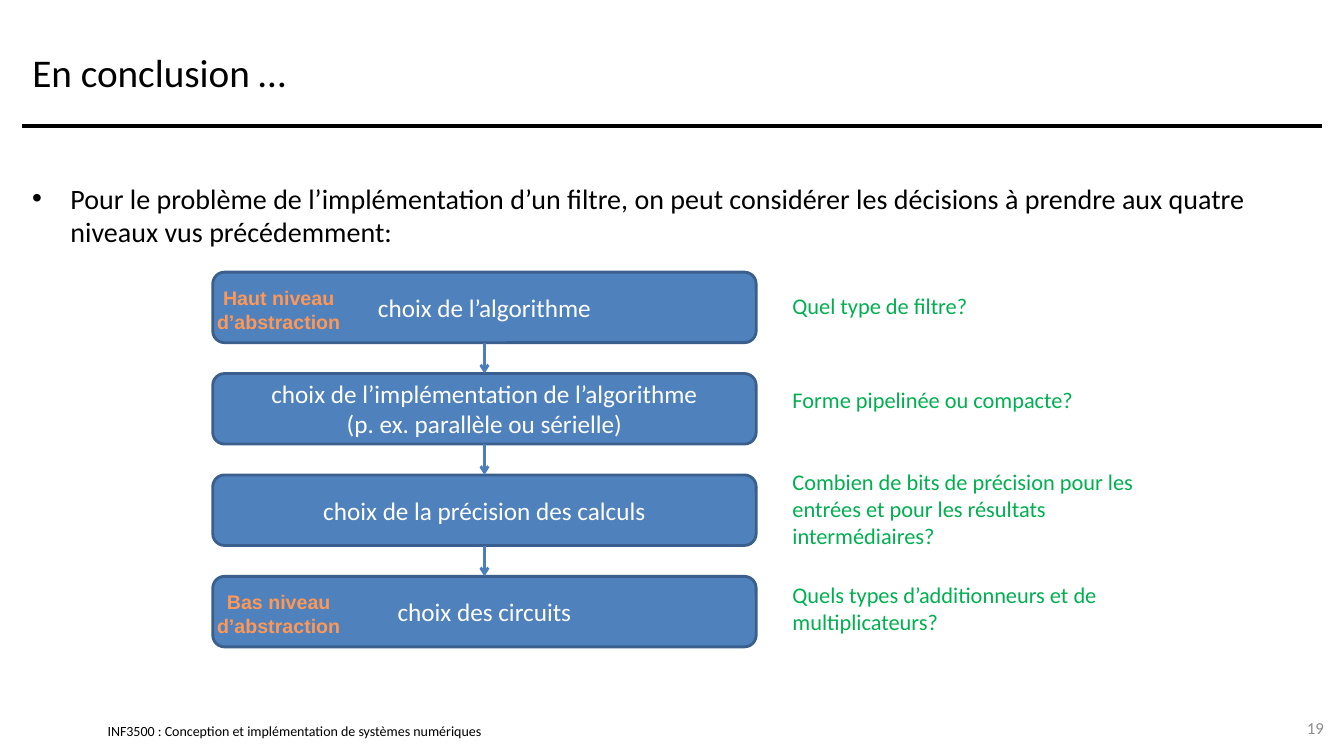
from lxml import etree
from pptx import Presentation
from pptx.dml.color import RGBColor
from pptx.enum.shapes import MSO_CONNECTOR, MSO_SHAPE
from pptx.enum.text import MSO_ANCHOR, MSO_AUTO_SIZE, PP_ALIGN
from pptx.oxml.ns import qn
from pptx.util import Inches, Pt

STRAIGHT = MSO_CONNECTOR.STRAIGHT
ROUNDED = MSO_SHAPE.ROUNDED_RECTANGLE
TOP, MIDDLE = MSO_ANCHOR.TOP, MSO_ANCHOR.MIDDLE
LEFT, CENTER, RIGHT = PP_ALIGN.LEFT, PP_ALIGN.CENTER, PP_ALIGN.RIGHT
BOTTOM_SIDE, TOP_SIDE = 2, 0

COLORS = {
    "text": "000000",
    "box": "4F81BD",
    "edge": "3A5F8C",
    "arrow": "4B7EBC",
    "box_text": "FFFFFF",
    "question": "00B050",
    "level": "FF9856",
    "number": "8C8C8C",
}
SLIDE_W, SLIDE_H = 13.33, 7.5
MARGIN, CONTENT_W = 0.22, 12.89
BOX_H, STEP = 0.7, 1.006
QUESTION_H = 0.81

LEVELS = [
    (["choix de l’algorithme"], "Quel type de filtre?", -0.02, "Haut niveau d’abstraction"),
    (["choix de l’implémentation de l’algorithme", "(p. ex. parallèle ou sérielle)"],
     "Forme pipelinée ou compacte?", -0.09, None),
    (["choix de la précision des calculs"],
     "Combien de bits de précision pour les entrées et pour les résultats intermédiaires?",
     -0.02, None),
    (["choix des circuits"], "Quels types d’additionneurs et de multiplicateurs?",
     -0.04, "Bas niveau d’abstraction"),
]


def rgb(name):
    return RGBColor.from_string(COLORS[name])


def write(sp, lines, size, color, align=LEFT, anchor=MIDDLE, font="Calibri", bold=False, inset=None):
    tf = sp.text_frame
    tf.word_wrap = True
    tf.auto_size = MSO_AUTO_SIZE.NONE
    tf.vertical_anchor = anchor
    if inset is not None:
        tf.margin_left = tf.margin_right = tf.margin_top = tf.margin_bottom = Inches(inset)
    p = tf.paragraphs[0]
    p.alignment = align
    for i, line in enumerate(lines):
        if i:
            p.add_line_break()
        r = p.add_run()
        r.text = line
        r.font.size, r.font.name, r.font.bold = Pt(size), font, bold
        r.font.color.rgb = rgb(color)
    return p


def add_text(s, box, *args, **style):
    sp = s.shapes.add_textbox(*map(Inches, box))
    return write(sp, *args, **style)


def add_line(s, start, end, color, width):
    line = s.shapes.add_connector(STRAIGHT, *map(Inches, start + end))
    line.line.color.rgb = rgb(color)
    line.line.width = Pt(width)
    etree.SubElement(line._element.spPr, qn("a:effectLst"))
    return line


def add_header(s, box):
    left, top, width, height = box
    title = s.shapes.title
    title.left, title.top, title.width, title.height = map(Inches, box)
    write(title, ["En conclusion …"], 28, "text")
    bottom = top + height
    add_line(s, (left, bottom), (left + width, bottom), "text", 3)


def add_bullet(s, box):
    text = ("Pour le problème de l’implémentation d’un filtre, on peut considérer "
            "les décisions à prendre aux quatre niveaux vus précédemment:")
    p = add_text(s, box, [text], 20, "text", anchor=TOP)
    pPr = p._p.get_or_add_pPr()
    pPr.set("marL", str(Inches(0.38)))
    pPr.set("indent", str(-Inches(0.38)))
    etree.SubElement(pPr, qn("a:buFont"), typeface="Arial")
    etree.SubElement(pPr, qn("a:buChar"), char="•")


def add_level_box(s, box, lines):
    sp = s.shapes.add_shape(ROUNDED, *map(Inches, box))
    sp.shadow.inherit = False
    sp.fill.solid()
    sp.fill.fore_color.rgb = rgb("box")
    sp.line.color.rgb = rgb("edge")
    sp.line.width = Pt(2)
    write(sp, lines, 18, "box_text", align=CENTER)
    return sp


def join(s, upper, lower):
    arrow = add_line(s, (0, 0), (0, 0), "arrow", 2)
    arrow.begin_connect(upper, BOTTOM_SIDE)
    arrow.end_connect(lower, TOP_SIDE)
    etree.SubElement(arrow.line._get_or_add_ln(), qn("a:tailEnd"), type="arrow")


def add_levels(s, left, top, width):
    previous = None
    for row, (lines, question, shift, level) in enumerate(LEVELS):
        y = top + row * STEP
        box = add_level_box(s, (left, y, width, BOX_H), lines)
        if previous is not None:
            join(s, previous, box)
        previous = box
        question_top = y + (BOX_H - QUESTION_H) / 2 + shift
        add_text(s, (left + width + 0.36, question_top, 3.72, QUESTION_H),
                 [question], 16, "question", inset=0)
        if level:
            add_text(s, (left - 0.13, y + 0.09, 1.57, 0.57), [level], 14, "level",
                     align=CENTER, anchor=TOP, font="Arial", bold=True)


def add_footer(s):
    add_text(s, (SLIDE_W * 0.08, 7.17, 5.11, 0.17),
             ["INF3500 : Conception et implémentation de systèmes numériques"],
             10, "text", inset=0)
    add_text(s, (12.56, 7.02, 0.67, 0.4), ["19"], 12, "number", align=RIGHT)


def main():
    prs = Presentation()
    prs.slide_width, prs.slide_height = Inches(SLIDE_W), Inches(SLIDE_H)
    s = prs.slides.add_slide(prs.slide_layouts[5])
    add_header(s, (MARGIN, 0.17, CONTENT_W, 1.08))
    add_bullet(s, (MARGIN, 1.75, CONTENT_W, 0.85))
    add_levels(s, 2.11, 2.7, 5.39)
    add_footer(s)
    prs.save("out.pptx")


if __name__ == "__main__":
    main()
